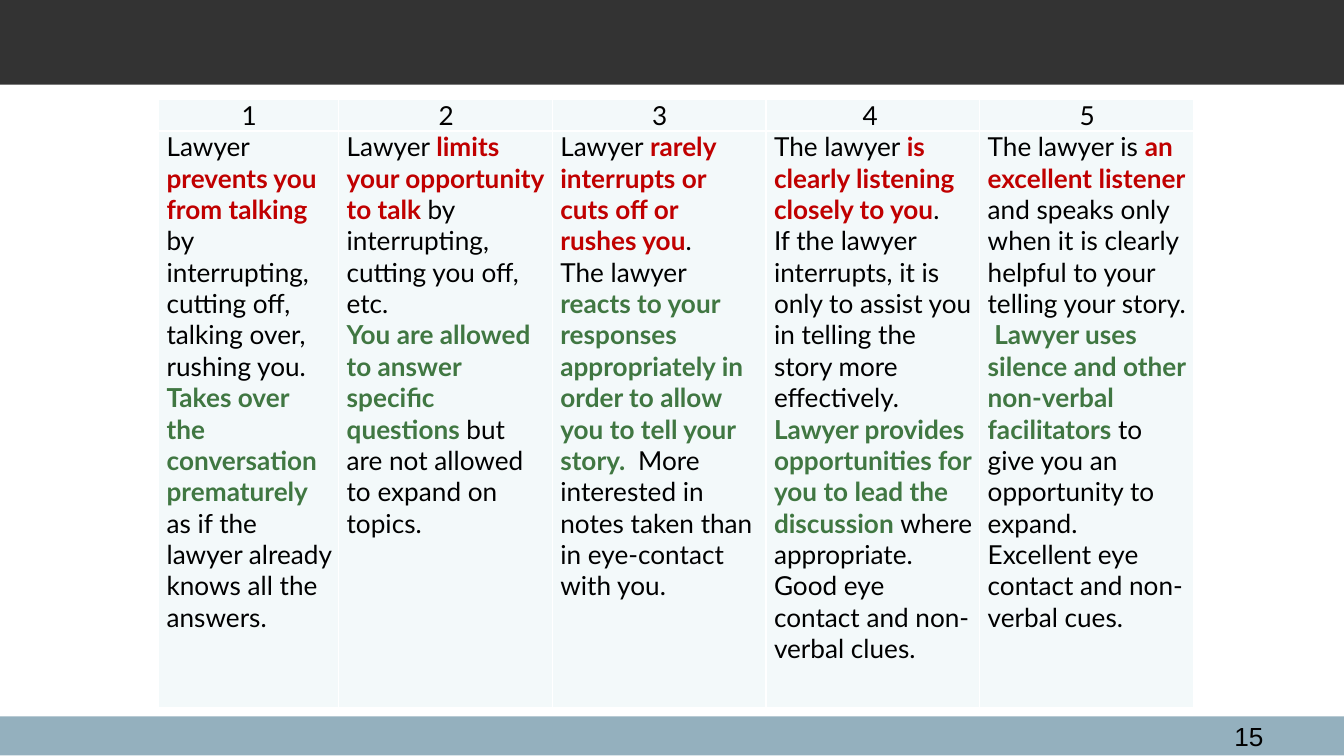
"""Build a slide with a five-point scale of how a lawyer listens."""
from lxml.etree import SubElement
from pptx import Presentation
from pptx.dml.color import RGBColor
from pptx.enum.shapes import MSO_SHAPE
from pptx.enum.text import PP_ALIGN
from pptx.oxml.ns import qn
from pptx.util import Inches, Pt

STYLES = {
    "plain": ("000000", False),
    "red": ("C00000", True),
    "green": ("407742", True),
}
BARS = [(5.33, 0.29, "94B0BE"), (0, 0.63, "333333")]
WIDTHS = [1.34] + [1.59] * 4
HEIGHTS = [0.23, 4.29]
PALE, WHITE = "F3F9FA", "FFFFFF"
MARGINS = {"margin_left": 0.06, "margin_right": 0.05,
           "margin_top": 0, "margin_bottom": 0}
SCALE = [
    ("1", [
        [("Lawyer ", "plain"), ("prevents you from talking ", "red"),
         ("by interrupting, cutting off, talking over, rushing you.", "plain")],
        [("Takes over the conversation prematurely ", "green"),
         ("as if the lawyer already knows all the answers.", "plain")],
    ]),
    ("2", [
        [("Lawyer ", "plain"), ("limits your opportunity to talk ", "red"),
         ("by interrupting, cutting you off, etc.", "plain")],
        [("You are allowed to answer specific questions ", "green"),
         ("but are not allowed to expand on topics.", "plain")],
    ]),
    ("3", [
        [("Lawyer ", "plain"),
         ("rarely interrupts or cuts off or rushes you", "red"), (".", "plain")],
        [("The lawyer ", "plain"),
         ("reacts to your responses appropriately in order to allow you "
          "to tell your story.  ", "green"),
         ("More interested in notes taken than in eye-contact with you.", "plain")],
    ]),
    ("4 ", [
        [("The lawyer ", "plain"),
         ("is clearly listening closely to you", "red"), (".", "plain")],
        [("If the lawyer interrupts, it is only to assist you in telling "
          "the story more effectively.", "plain")],
        [("Lawyer provides opportunities for you to lead the discussion ", "green"),
         ("where appropriate.", "plain")],
        [("Good eye contact and non-verbal clues.", "plain")],
    ]),
    ("5", [
        [("The lawyer is ", "plain"), ("an excellent listener ", "red"),
         ("and speaks only when it is clearly helpful to your telling "
          "your story.  ", "plain"),
         ("Lawyer uses silence and other non-verbal facilitators ", "green"),
         ("to give you an opportunity to expand.", "plain")],
        [("Excellent eye contact and non-verbal cues.", "plain")],
    ]),
]


def paint(fill, color):
    fill.solid()
    fill.fore_color.rgb = RGBColor.from_string(color)


def write(frame, paras, align, face="Lato"):
    for num, runs in enumerate(paras):
        para = frame.add_paragraph() if num else frame.paragraphs[0]
        para.alignment = align
        for text, style in runs:
            run = para.add_run()
            run.text = text
            color, bold = STYLES[style]
            look = {"name": face, "size": Pt(14), "bold": bold}
            for key, value in look.items():
                setattr(run.font, key, value)
            paint(run.font.fill, color)


def edge(cell):
    props = cell._tc.get_or_add_tcPr()
    for side in ("lnL", "lnR", "lnT", "lnB"):
        line = SubElement(props, qn(f"a:{side}"), w=str(Pt(1)))
        SubElement(SubElement(line, qn("a:solidFill")), qn("a:srgbClr"), val=WHITE)


def add_bar(slide, top, height, color):
    bar = slide.shapes.add_shape(
        MSO_SHAPE.RECTANGLE, 0, Inches(top), Inches(10), Inches(height))
    bar.shadow.inherit = False
    bar.line.fill.background()
    paint(bar.fill, color)


def add_scale(slide):
    table = slide.shapes.add_table(
        2, len(SCALE), Inches(1.18), Inches(0.74),
        Inches(sum(WIDTHS)), Inches(sum(HEIGHTS))).table
    table.first_row = table.horz_banding = False
    for row, height in zip(table.rows, HEIGHTS):
        row.height = Inches(height)
    for col, (score, paras) in enumerate(SCALE):
        table.columns[col].width = Inches(WIDTHS[col])
        parts = [([[(score, "plain")]], PP_ALIGN.CENTER), (paras, PP_ALIGN.LEFT)]
        for row, (body, align) in enumerate(parts):
            cell = table.cell(row, col)
            for key, value in MARGINS.items():
                setattr(cell, key, Inches(value))
            edge(cell)
            paint(cell.fill, PALE)
            write(cell.text_frame, body, align)


def main():
    deck = Presentation()
    deck.slide_width = Inches(10)
    deck.slide_height = deck.slide_width * 9 // 16
    slide = deck.slides.add_slide(deck.slide_layouts[6])
    for bar in BARS:
        add_bar(slide, *bar)
    add_scale(slide)
    page = slide.shapes.add_textbox(
        Inches(8.86), Inches(5.31), Inches(0.64), Inches(0.18)).text_frame
    page.word_wrap = True
    write(page, [[("15", "plain")]], PP_ALIGN.RIGHT, "Arial")
    deck.save("out.pptx")


if __name__ == "__main__":
    main()
